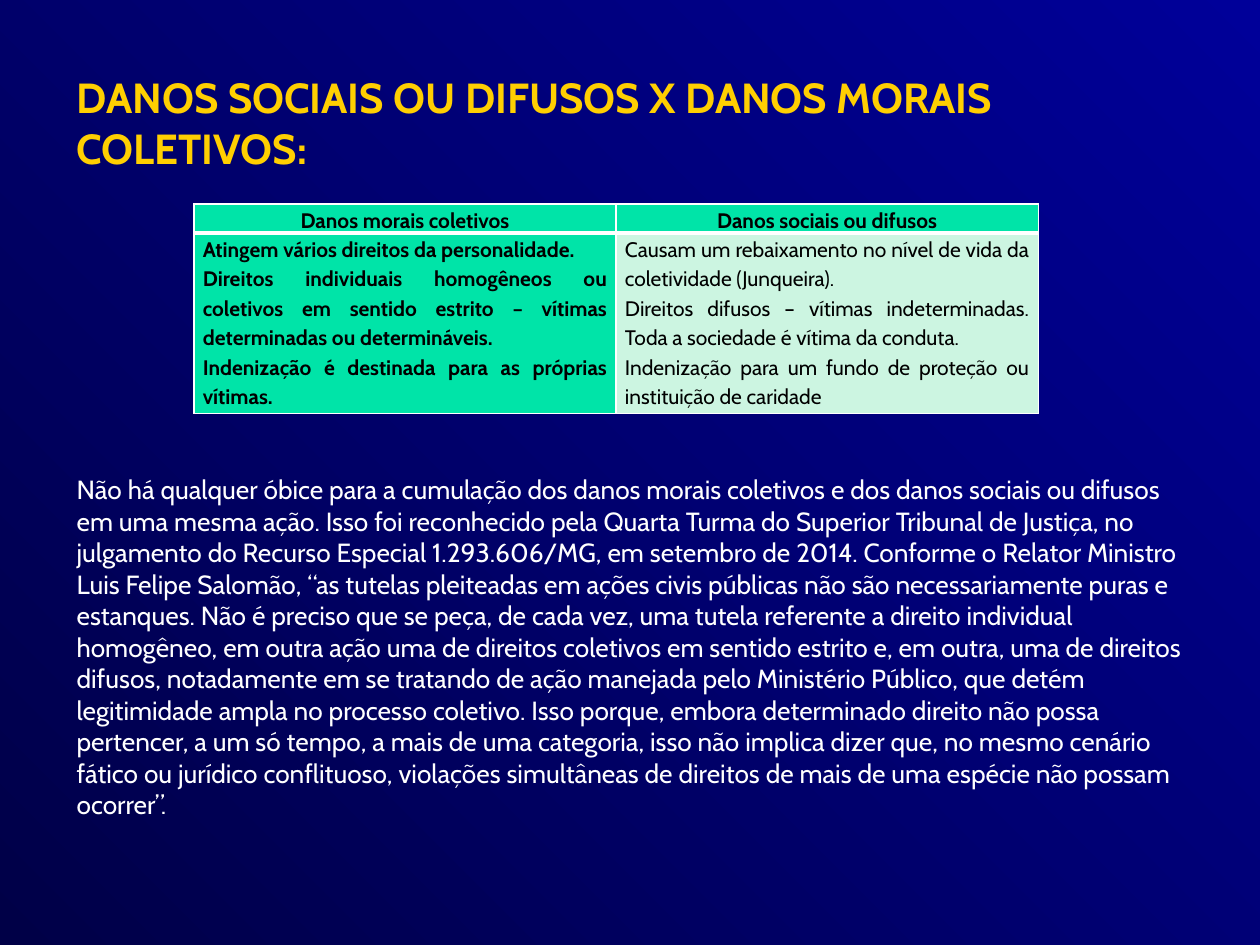
"""Builds a slide comparing collective moral damages with social damages."""
from lxml.etree import SubElement
from pptx import Presentation
from pptx.dml.color import RGBColor
from pptx.enum.text import PP_ALIGN
from pptx.oxml.ns import qn
from pptx.util import Inches, Pt

FONT = "Cabin"
TITLE = "DANOS SOCIAIS OU DIFUSOS X DANOS MORAIS COLETIVOS:"
SENTENCES = [
    "Não há qualquer óbice para a cumulação dos danos morais coletivos e dos danos sociais ou "
    "difusos em uma mesma ação.",
    "Isso foi reconhecido pela Quarta Turma do Superior Tribunal de Justiça, no julgamento do "
    "Recurso Especial 1.293.606/MG, em setembro de 2014.",
    "Conforme o Relator Ministro Luis Felipe Salomão, “as tutelas pleiteadas em ações civis "
    "públicas não são necessariamente puras e estanques.",
    "Não é preciso que se peça, de cada vez, uma tutela referente a direito individual homogêneo, "
    "em outra ação uma de direitos coletivos em sentido estrito e, em outra, uma de direitos "
    "difusos, notadamente em se tratando de ação manejada pelo Ministério Público, que detém "
    "legitimidade ampla no processo coletivo.",
    "Isso porque, embora determinado direito não possa pertencer, a um só tempo, a mais de uma "
    "categoria, isso não implica dizer que, no mesmo cenário fático ou jurídico conflituoso, "
    "violações simultâneas de direitos de mais de uma espécie não possam ocorrer”.",
]
HEADERS = ["Danos morais coletivos", "Danos sociais ou difusos"]
COLLECTIVE = [
    "Atingem vários direitos da personalidade.",
    "Direitos individuais homogêneos ou coletivos em sentido estrito – vítimas determinadas ou "
    "determináveis.",
    "Indenização é destinada para as próprias vítimas.",
]
SOCIAL = [
    "Causam um rebaixamento no nível de vida da coletividade (Junqueira).",
    "Direitos difusos – vítimas indeterminadas. Toda a sociedade é vítima da conduta.",
    "Indenização para um fundo de proteção ou instituição de caridade",
]
ROWS = [[[h] for h in HEADERS], [COLLECTIVE, SOCIAL]]
ROW_HEIGHTS = [0.23, 1.43]
COL_WIDTH = 3.35
GREEN, PALE, WHITE = "00E4A8", "CCF5E1", "FFFFFF"
MARGINS = {"margin_left": 0.07, "margin_top": 0, "margin_right": 0.07, "margin_bottom": 0}


def rgb(value):
    return RGBColor.from_string(value)


def add_text(tf, texts, size, color, bold, first=True, **paragraph_format):
    for i, text in enumerate(texts):
        p = tf.paragraphs[0] if first and i == 0 else tf.add_paragraph()
        for name, value in paragraph_format.items():
            setattr(p, name, value)
        r = p.add_run()
        r.text = text
        for name, value in {"name": FONT, "size": Pt(size), "bold": bold}.items():
            setattr(r.font, name, value)
        r.font.color.rgb = rgb(color)


def add_borders(cell, widths):
    tc_pr = cell._tc.get_or_add_tcPr()
    for i, (side, width) in enumerate(widths.items()):
        ln = SubElement(tc_pr, qn(f"a:ln{side}"), w=str(Pt(width)))
        fill = SubElement(ln, qn("a:solidFill"))
        SubElement(fill, qn("a:srgbClr"), val=WHITE)
        tc_pr.insert(i, ln)


def add_comparison(slide):
    frame = slide.shapes.add_table(2, 2, Inches(1.54), Inches(1.62),
                                   Inches(2 * COL_WIDTH), Inches(sum(ROW_HEIGHTS)))
    table = frame.table
    table.horz_banding = False
    for col in table.columns:
        col.width = Inches(COL_WIDTH)
    for i, (row, height) in enumerate(zip(ROWS, ROW_HEIGHTS)):
        table.rows[i].height = Inches(height)
        for j, texts in enumerate(row):
            cell = table.cell(i, j)
            for name, value in MARGINS.items():
                setattr(cell, name, Inches(value))
            bold = i == 0 or j == 0
            cell.fill.solid()
            cell.fill.fore_color.rgb = rgb(GREEN if bold else PALE)
            add_borders(cell, {"L": 1, "R": 1, "T": 3 if i else 1, "B": 1 if i else 3})
            add_text(cell.text_frame, texts, 12, "000000", bold, line_spacing=1.15,
                     alignment=PP_ALIGN.JUSTIFY if i else PP_ALIGN.CENTER)


def main():
    prs = Presentation()
    prs.slide_width, prs.slide_height = Inches(10), Inches(7.5)
    slide = prs.slides.add_slide(prs.slide_layouts[6])
    fill = slide.background.fill
    fill.gradient()
    fill.gradient_angle = 45
    for stop, color in zip(fill.gradient_stops, ["000047", "000099"]):
        stop.color.rgb = rgb(color)
    box = slide.shapes.add_textbox(Inches(0.51), Inches(0.52), Inches(8.98), Inches(6.5))
    tf = box.text_frame
    tf.word_wrap = True
    add_text(tf, [TITLE], 24, "FFCF01", True)
    add_text(tf, [" ".join(SENTENCES)], 15, WHITE, False, first=False, space_before=Pt(172))
    add_comparison(slide)
    prs.save("out.pptx")


if __name__ == "__main__":
    main()
